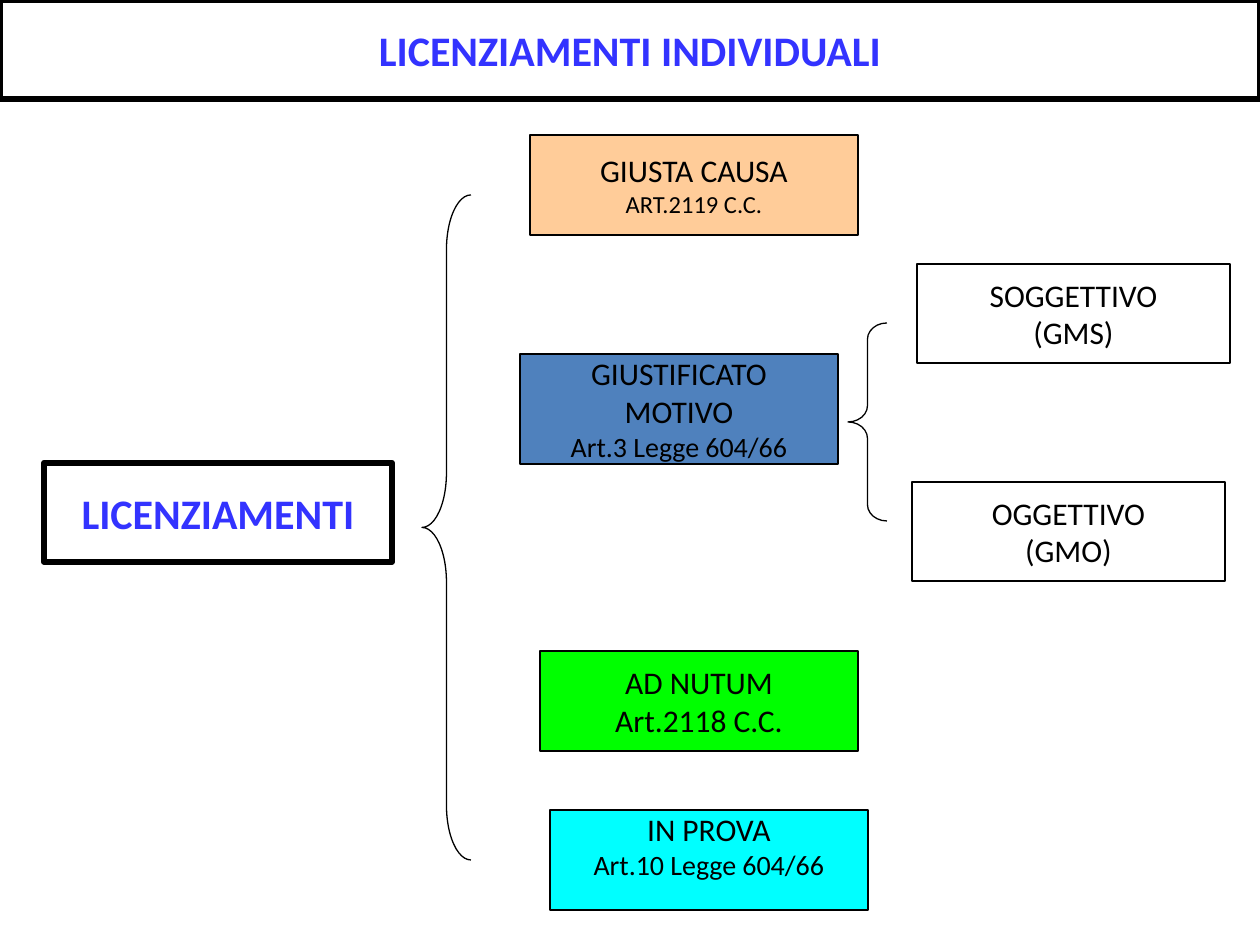
from pptx import Presentation
from pptx.dml.color import RGBColor
from pptx.enum.shapes import MSO_SHAPE
from pptx.enum.text import MSO_ANCHOR, PP_ALIGN
from pptx.util import Pt

RECT = MSO_SHAPE.RECTANGLE
BRACE = MSO_SHAPE.LEFT_BRACE
TOP = MSO_ANCHOR.TOP
MIDDLE = MSO_ANCHOR.MIDDLE
CENTER = PP_ALIGN.CENTER

BLACK = RGBColor(0x00, 0x00, 0x00)
BLUE = RGBColor(0x33, 0x33, 0xFF)
PEACH = RGBColor(0xFF, 0xCC, 0x99)
STEEL = RGBColor(0x4F, 0x81, 0xBD)
GREEN = RGBColor(0x00, 0xFF, 0x00)
CYAN = RGBColor(0x00, 0xFF, 0xFF)

FONT = "Calibri"
SCALE = 914400 / 126
THIN, THICK = 0.75, 3.5


def px(n):
    return round(n * SCALE)


def outline(slide, kind, box, fill=None, width=THIN):
    shape = slide.shapes.add_shape(kind, *map(px, box))
    shape.shadow.inherit = False
    if fill is None:
        shape.fill.background()
    else:
        shape.fill.solid()
        shape.fill.fore_color.rgb = fill
    shape.line.color.rgb = BLACK
    shape.line.width = Pt(width)
    return shape


def label(shape, lines, color=BLACK, bold=False, anchor=MIDDLE):
    frame = shape.text_frame
    frame.word_wrap = False
    frame.vertical_anchor = anchor
    if anchor == TOP:
        frame.margin_top = 0
    for i, (text, size) in enumerate(lines):
        para = frame.paragraphs[0] if i == 0 else frame.add_paragraph()
        para.text = text
        para.alignment = CENTER
        font = para.font
        font.name = FONT
        font.size = Pt(size)
        font.bold = bold
        font.color.rgb = color


def heading(slide, box, text):
    shape = outline(slide, RECT, box, width=THICK)
    label(shape, [(text, 24)], BLUE, True)


def brace(slide, box, bend):
    shape = outline(slide, BRACE, box)
    shape.adjustments[0] = bend
    shape.adjustments[1] = 0.5


def causes(slide, box):
    left, top, width, height = box
    brace(slide, (left, top + 60, 49, 665), 1.116)
    cards = [
        (108, 0, 328, 100, PEACH, MIDDLE,
         [("GIUSTA CAUSA", 18), ("ART.2119 C.C.", 14)]),
        (98, 219, 318, 110, STEEL, MIDDLE,
         [("GIUSTIFICATO", 18), ("MOTIVO", 18), ("Art.3 Legge 604/66", 16)]),
        (118, 516, 318, 100, GREEN, MIDDLE,
         [("AD NUTUM", 18), ("Art.2118 C.C.", 18)]),
        (128, 675, 318, 100, CYAN, TOP,
         [("IN PROVA", 18), ("Art.10 Legge 604/66", 16)]),
    ]
    for x, y, w, h, fill, anchor, lines in cards:
        shape = outline(slide, RECT, (left + x, top + y, w, h), fill)
        label(shape, lines, anchor=anchor)


def motives(slide, box):
    left, top, width, height = box
    brace(slide, (left, top + 59, 39, 198), 0.418)
    cards = [(69, 0, "SOGGETTIVO", "(GMS)"), (64, 218, "OGGETTIVO", "(GMO)")]
    for x, y, name, code in cards:
        shape = outline(slide, RECT, (left + x, top + y, 313, 99))
        label(shape, [(name, 18), (code, 18)])


def main():
    deck = Presentation()
    deck.slide_width, deck.slide_height = px(1260), px(945)
    slide = deck.slides.add_slide(deck.slide_layouts[6])
    causes(slide, (422, 135, 447, 775))
    motives(slide, (848, 264, 382, 317))
    heading(slide, (44, 463, 348, 99), "LICENZIAMENTI")
    heading(slide, (0, 0, 1260, 99), "LICENZIAMENTI INDIVIDUALI")
    deck.save("out.pptx")


if __name__ == "__main__":
    main()
